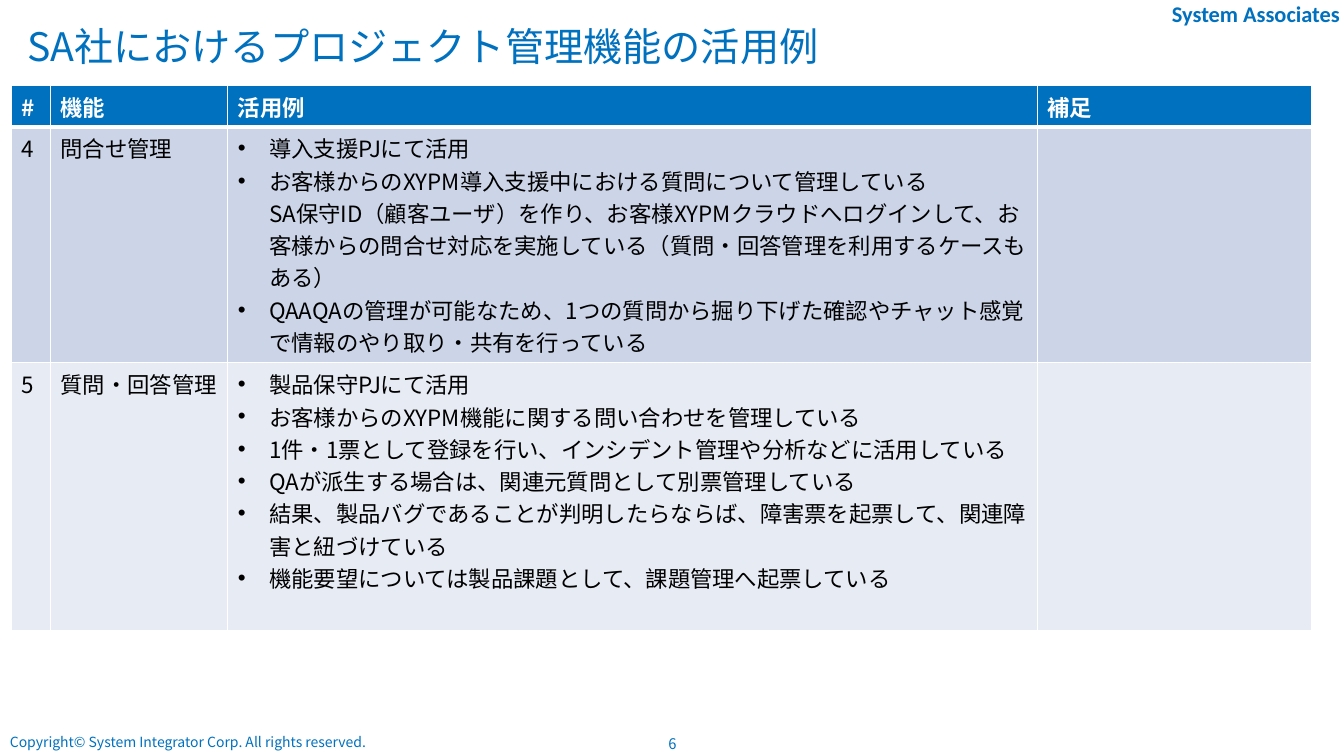
from lxml.etree import SubElement
from pptx import Presentation
from pptx.dml.color import RGBColor
from pptx.enum.text import MSO_ANCHOR, PP_ALIGN
from pptx.oxml.ns import qn
from pptx.util import Inches, Pt

COLORS = {"brand": "0071BE", "white": "FFFFFF", "ink": "000000",
          "band_dark": "CCD5E8", "band_light": "E7EBF4"}
JAPANESE_FONT = "Noto Sans CJK JP"
COLUMN_WIDTHS = (0.39, 1.76, 8.03, 2.72)
ROW_HEIGHTS = (0.41, 2.34, 2.66)
HEADINGS = ("#", "機能", "活用例", "補足")
FEATURES = (
    ("4", "問合せ管理", (
        "導入支援PJにて活用",
        "お客様からのXYPM導入支援中における質問について管理している\n"
        "SA保守ID（顧客ユーザ）を作り、お客様XYPMクラウドへログインして、"
        "お客様からの問合せ対応を実施している（質問・回答管理を利用するケースもある）",
        "QAAQAの管理が可能なため、1つの質問から掘り下げた確認や"
        "チャット感覚で情報のやり取り・共有を行っている",
    )),
    ("5", "質問・回答管理", (
        "製品保守PJにて活用",
        "お客様からのXYPM機能に関する問い合わせを管理している",
        "1件・1票として登録を行い、インシデント管理や分析などに活用している",
        "QAが派生する場合は、関連元質問として別票管理している",
        "結果、製品バグであることが判明したらならば、障害票を起票して、"
        "関連障害と紐づけている",
        "機能要望については製品課題として、課題管理へ起票している",
    )),
)


def style_paragraph(paragraph, size, color, bold=False, face=JAPANESE_FONT):
    """Set size, colour, weight and typeface of a paragraph."""
    font = paragraph.font
    font.size, font.bold, font.name = Pt(size), bold, face
    font.color.rgb = RGBColor.from_string(COLORS[color])
    SubElement(paragraph._p.pPr.find(qn("a:defRPr")), qn("a:ea"), typeface=face)


def add_bullet(paragraph):
    """Give a paragraph a hanging round bullet."""
    properties = paragraph._p.get_or_add_pPr()
    indent = Inches(0.31)
    properties.set("marL", str(indent))
    properties.set("indent", str(-indent))
    SubElement(properties, qn("a:buFont"), typeface="Arial")
    SubElement(properties, qn("a:buChar"), char="•")


def add_borders(cell, bottom=1, top=1):
    """Draw white borders around a cell."""
    properties = cell._tc.get_or_add_tcPr()
    for side, width in (("L", 1), ("R", 1), ("T", top), ("B", bottom)):
        line = SubElement(properties, qn(f"a:ln{side}"), w=str(Pt(width)))
        fill = SubElement(line, qn("a:solidFill"))
        SubElement(fill, qn("a:srgbClr"), val=COLORS["white"])


def fill_cell(cell, lines, background, color, bold=False, bulleted=False):
    """Fill a cell with its background and paragraphs."""
    cell.fill.solid()
    cell.fill.fore_color.rgb = RGBColor.from_string(COLORS[background])
    for index, line in enumerate(lines):
        frame = cell.text_frame
        paragraph = frame.add_paragraph() if index else frame.paragraphs[0]
        paragraph.text = line
        if bulleted:
            add_bullet(paragraph)
        style_paragraph(paragraph, 16, color, bold)


def add_label(slide, box, text, size, align=PP_ALIGN.LEFT, **style):
    """Add a one-line brand-coloured label in the given box."""
    frame = slide.shapes.add_textbox(*map(Inches, box)).text_frame
    frame.word_wrap = True
    paragraph = frame.paragraphs[0]
    paragraph.text = text
    paragraph.alignment = align
    style_paragraph(paragraph, size, "brand", **style)
    return frame


def add_title(slide, box, text):
    """Place and format the slide title."""
    title = slide.shapes.title
    title.left, title.top, title.width, title.height = map(Inches, box)
    title.text_frame.vertical_anchor = MSO_ANCHOR.MIDDLE
    paragraph = title.text_frame.paragraphs[0]
    paragraph.text = text
    paragraph.alignment = PP_ALIGN.LEFT
    style_paragraph(paragraph, 28, "brand")


def add_feature_table(slide, left, top):
    """Build the table of features and their use."""
    table = slide.shapes.add_table(
        len(ROW_HEIGHTS), len(COLUMN_WIDTHS), Inches(left), Inches(top),
        Inches(sum(COLUMN_WIDTHS)), Inches(sum(ROW_HEIGHTS))).table
    for column, width in zip(table.columns, COLUMN_WIDTHS):
        column.width = Inches(width)
    for row, height in zip(table.rows, ROW_HEIGHTS):
        row.height = Inches(height)
    for column, heading in enumerate(HEADINGS):
        cell = table.cell(0, column)
        add_borders(cell, bottom=3)
        fill_cell(cell, [heading], "brand", "white", bold=True)
    for row, (number, feature, uses) in enumerate(FEATURES, start=1):
        background = "band_dark" if row % 2 else "band_light"
        for column, lines in enumerate(([number], [feature], uses, [])):
            cell = table.cell(row, column)
            add_borders(cell, top=3 if row == 1 else 1)
            fill_cell(cell, lines, background, "ink", bulleted=lines is uses)


def add_frame_labels(slide):
    """Add the company name, copyright line and page number."""
    company = add_label(slide, (11.12, 0, 2.21, 0.31), "System Associates", 16,
                        PP_ALIGN.RIGHT, bold=True, face="Calibri")
    company.margin_left = company.margin_top = company.margin_bottom = 0
    company.margin_right = Inches(0.04)
    add_label(slide, (0, 7.23, 6.14, 0.27),
              "Copyright© System Integrator Corp. All rights reserved.", 10)
    page = add_label(slide, (6.48, 7.24, 0.38, 0.28), "6", 10.5, PP_ALIGN.CENTER)
    page.vertical_anchor = MSO_ANCHOR.MIDDLE


def main():
    """Build the slide and save it."""
    presentation = Presentation()
    presentation.slide_width = Inches(13.33)
    presentation.slide_height = Inches(7.5)
    slide = presentation.slides.add_slide(presentation.slide_layouts[5])
    add_frame_labels(slide)
    add_title(slide, (0.17, 0.28, 12.99, 0.35),
              "SA社におけるプロジェクト管理機能の活用例")
    add_feature_table(slide, 0.11, 0.85)
    presentation.save("out.pptx")


if __name__ == "__main__":
    main()
